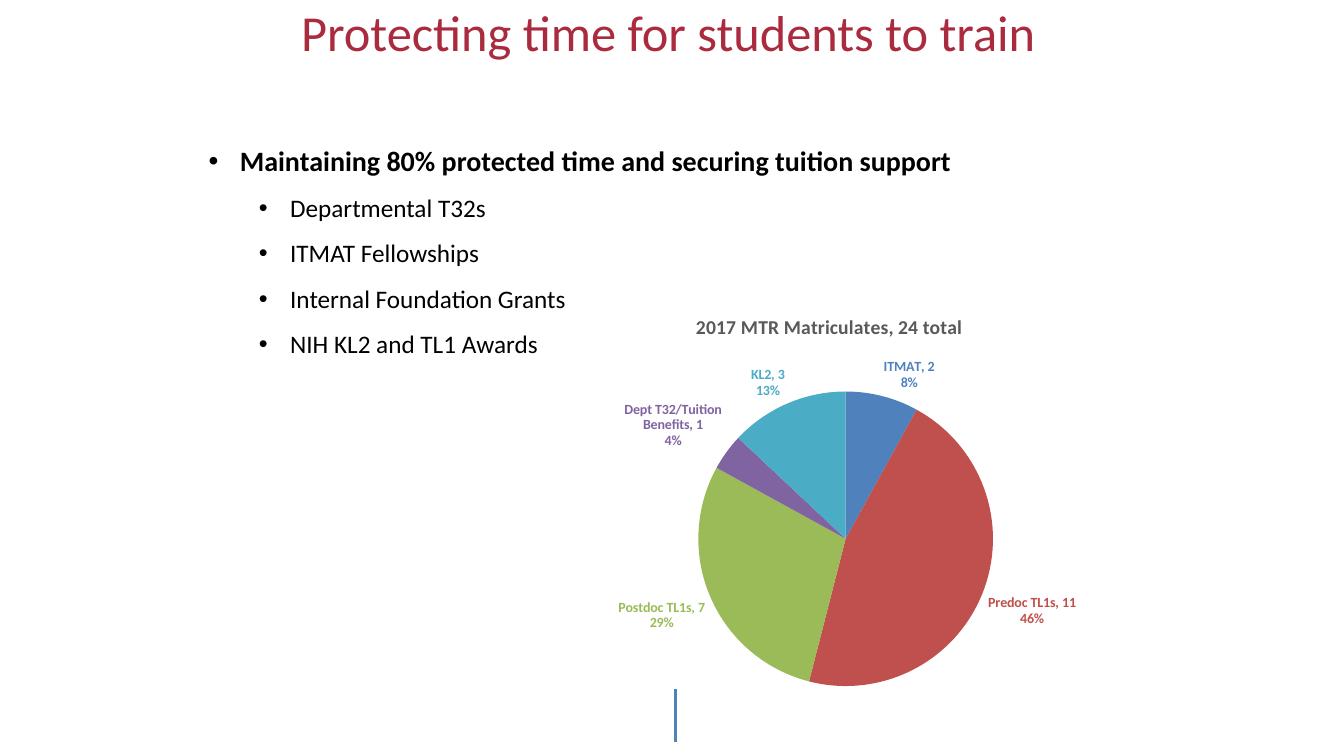
from dataclasses import dataclass

import lxml.etree
import pptx
import pptx.chart.data
import pptx.dml.color
import pptx.enum.chart
import pptx.enum.shapes
import pptx.enum.text
import pptx.oxml
import pptx.oxml.ns
import pptx.util

Inches = pptx.util.Inches
qn = pptx.oxml.ns.qn


@dataclass(frozen=True)
class Theme:
    font: str = "Calibri"
    title: str = "AA2B3E"
    text: str = "000000"
    chart_title: str = "595959"
    rule: str = "4F81BD"
    title_size: int = 36
    lead_size: int = 20
    item_size: int = 18
    chart_title_size: int = 14
    label_size: int = 10


@dataclass(frozen=True)
class Bullet:
    text: str
    level: int = 1


@dataclass(frozen=True)
class Slice:
    name: str
    percent: int
    color: str


THEME = Theme()
BULLETS = [
    Bullet("Maintaining 80% protected time and securing tuition support", 0),
    Bullet("Departmental T32s"),
    Bullet("ITMAT Fellowships"),
    Bullet("Internal Foundation Grants"),
    Bullet("NIH KL2 and TL1 Awards"),
]
SLICES = [
    Slice("ITMAT, 2", 8, "4F81BD"),
    Slice("Predoc TL1s, 11", 46, "C0504D"),
    Slice("Postdoc TL1s, 7", 29, "9BBB59"),
    Slice("Dept T32/Tuition Benefits, 1", 4, "8064A2"),
    Slice("KL2, 3", 13, "4BACC6"),
]


def rgb(color: str) -> pptx.dml.color.RGBColor:
    return pptx.dml.color.RGBColor.from_string(color)


def style(font, size: int, color: str, bold: bool = False) -> None:
    font.name = THEME.font
    font.size = pptx.util.Pt(size)
    font.bold = bold
    font.color.rgb = rgb(color)


def add_rule(slide) -> None:
    x = Inches(6.7)
    line = slide.shapes.add_connector(
        pptx.enum.shapes.MSO_CONNECTOR.STRAIGHT, x, Inches(6.84), x, Inches(7.36))
    line.line.color.rgb = rgb(THEME.rule)
    line.line.width = pptx.util.Pt(2)
    lxml.etree.SubElement(line._element.spPr, qn("a:effectLst"))


def add_title(slide, text: str) -> None:
    sp = slide.shapes.add_textbox(Inches(1.97), Inches(0.01), Inches(9.32), Inches(0.61))
    tf = sp.text_frame
    tf.word_wrap = True
    tf.vertical_anchor = pptx.enum.text.MSO_ANCHOR.MIDDLE
    tf.text = text
    p = tf.paragraphs[0]
    p.alignment = pptx.enum.text.PP_ALIGN.CENTER
    style(p.runs[0].font, THEME.title_size, THEME.title)


def add_bullets(slide, bullets: list[Bullet]) -> None:
    sp = slide.shapes.add_textbox(Inches(1.97), Inches(1.21), Inches(9.7), Inches(2.42))
    tf = sp.text_frame
    tf.word_wrap = True
    tf.text = "\n".join(b.text for b in bullets)
    for p, bullet in zip(tf.paragraphs, bullets):
        lead = bullet.level == 0
        p.level = bullet.level
        p.line_spacing = 1.5
        pPr = p._p.get_or_add_pPr()
        pPr.set("marL", str(Inches(0.31 + 0.5 * bullet.level)))
        pPr.set("indent", str(Inches(-0.31)))
        lxml.etree.SubElement(pPr, qn("a:buFont")).set("typeface", "Arial")
        lxml.etree.SubElement(pPr, qn("a:buChar")).set("char", "•")
        size = THEME.lead_size if lead else THEME.item_size
        style(p.runs[0].font, size, THEME.text, lead)


def manual_layout(**settings) -> lxml.etree._Element:
    layout = lxml.etree.Element(qn("c:layout"))
    manual = lxml.etree.SubElement(layout, qn("c:manualLayout"))
    for tag, value in settings.items():
        lxml.etree.SubElement(manual, qn(f"c:{tag}")).set("val", str(value))
    return layout


def replace_layout(parent, layout: lxml.etree._Element, index: int) -> None:
    for old in parent.findall(qn("c:layout")):
        parent.remove(old)
    parent.insert(index, layout)


def add_pie(slide, title: str, slices: list[Slice]) -> None:
    data = pptx.chart.data.CategoryChartData()
    data.categories = [s.name for s in slices]
    data.add_series("Series 1", [s.percent for s in slices])
    chart = slide.shapes.add_chart(
        pptx.enum.chart.XL_CHART_TYPE.PIE,
        Inches(5.43), Inches(2.91), Inches(5.53), Inches(4.06), data).chart
    style(chart.font, THEME.label_size, THEME.text)
    chart.has_legend = False

    # Chart title
    chart.has_title = True
    chart.chart_title.include_in_layout = False
    tf = chart.chart_title.text_frame
    tf.text = title
    style(tf.paragraphs[0].runs[0].font, THEME.chart_title_size, THEME.chart_title, True)
    replace_layout(chart.chart_title._element, manual_layout(
        xMode="edge", yMode="edge", x=0.26, y=0.04), 1)

    # Pie area
    replace_layout(chart._chartSpace.chart.plotArea, manual_layout(
        layoutTarget="inner", xMode="edge", yMode="edge",
        x=0.27, y=0.24, w=0.53, h=0.72), 0)

    # Slices and their labels
    plot = chart.plots[0]
    plot.vary_by_categories = True
    for i, s in enumerate(slices):
        point = plot.series[0].points[i]
        point.format.fill.solid()
        point.format.fill.fore_color.rgb = rgb(s.color)
        label = point.data_label
        style(label.font, THEME.label_size, s.color, True)
        label.position = pptx.enum.chart.XL_LABEL_POSITION.OUTSIDE_END
    for dLbl in plot.series[0]._element.iter(qn("c:dLbl")):
        for tag, shown in (("showVal", "0"), ("showCatName", "1"), ("showPercent", "1")):
            dLbl.find(qn(f"c:{tag}")).set("val", shown)
        lxml.etree.SubElement(dLbl, qn("c:separator")).text = "\n"


def main() -> None:
    prs = pptx.Presentation()
    prs.slide_width, prs.slide_height = Inches(13.33), Inches(7.5)
    slide = prs.slides.add_slide(prs.slide_layouts[6])
    add_rule(slide)
    add_title(slide, "Protecting time for students to train")
    add_bullets(slide, BULLETS)
    add_pie(slide, "2017 MTR Matriculates, 24 total", SLICES)
    prs.save("out.pptx")


if __name__ == "__main__":
    main()
